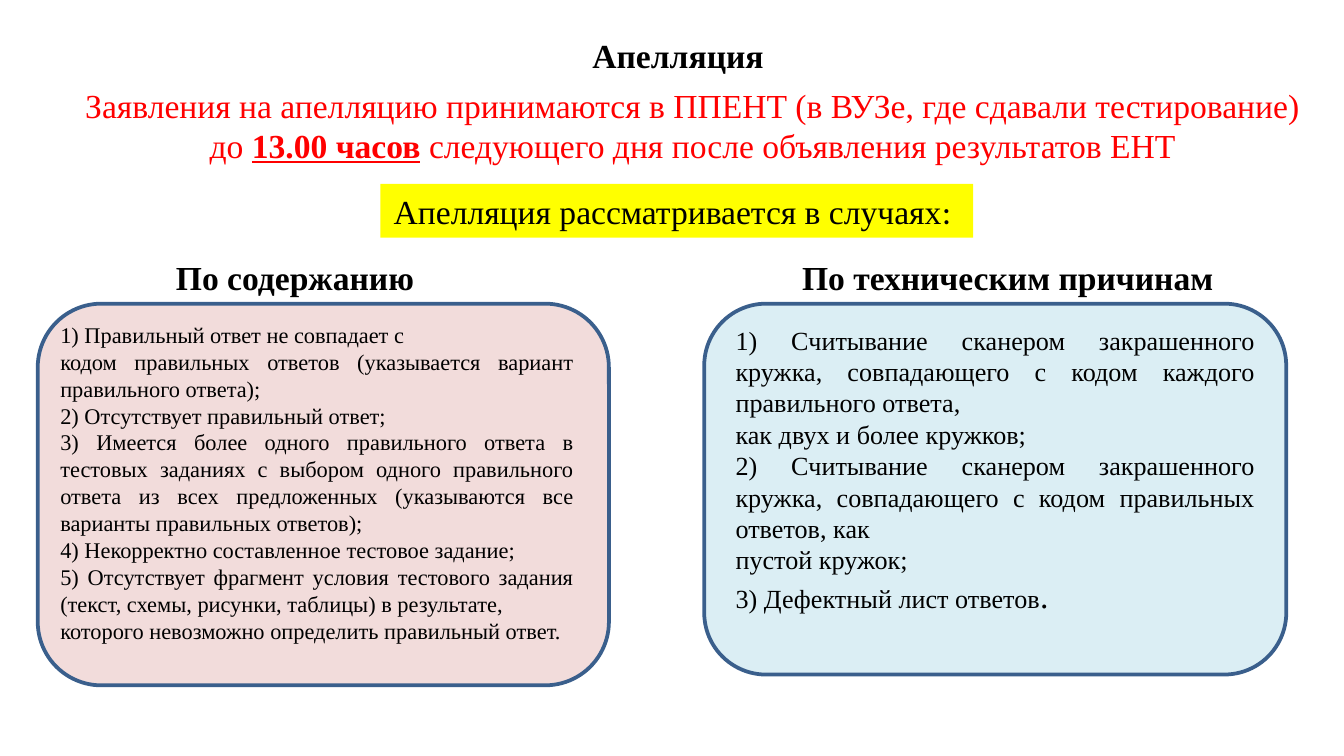
from pptx import Presentation
from pptx.dml.color import RGBColor
from pptx.enum.shapes import MSO_SHAPE
from pptx.enum.text import MSO_ANCHOR, PP_ALIGN
from pptx.util import Pt

BLACK = RGBColor(0x00, 0x00, 0x00)
RED = RGBColor(0xFF, 0x00, 0x00)
YELLOW = RGBColor(0xFF, 0xFF, 0x00)
PINK = RGBColor(0xF2, 0xDC, 0xDB)
PALE_BLUE = RGBColor(0xDB, 0xEE, 0xF4)
OUTLINE = RGBColor(0x3A, 0x5F, 0x8C)
SERIF = "Times New Roman"

# Content: each paragraph is a list of (text, format) spans
TITLE = [[("Апелляция", {"bold": True})]]
DEADLINE = [[
    ("Заявления на апелляцию принимаются в ППЕНТ (в ВУЗе, где сдавали тестирование) до ", {}),
    ("13.00 часов", {"bold": True, "underline": True}),
    (" следующего дня после объявления результатов ЕНТ", {}),
]]
CASES = [[("Апелляция рассматривается в случаях", {}), (":", {"name": "Calibri"})]]
CONTENT_HEADING = [[("По содержанию", {"bold": True})]]
TECHNICAL_HEADING = [[("По техническим причинам", {"bold": True})]]
CONTENT_REASONS = [[(line, {})] for line in (
    "1) Правильный ответ не совпадает с",
    "кодом правильных ответов (указывается вариант правильного ответа);",
    "2) Отсутствует правильный ответ;",
    "3) Имеется более одного правильного ответа в тестовых заданиях с выбором одного "
    "правильного ответа из всех предложенных (указываются все варианты правильных ответов);",
    "4) Некорректно составленное тестовое задание;",
    "5) Отсутствует фрагмент условия тестового задания (текст, схемы, рисунки, таблицы) "
    "в результате,",
    "которого невозможно определить правильный ответ.",
)]
TECHNICAL_REASONS = [[(line, {})] for line in (
    "1) Считывание сканером закрашенного кружка, совпадающего с кодом каждого "
    "правильного ответа,",
    "как двух и более кружков;",
    "2) Считывание сканером закрашенного кружка, совпадающего с кодом правильных ответов, как",
    "пустой кружок;",
)] + [[("3) Дефектный лист ответов", {}), (".", {"size": Pt(18)})]]

# Shared rows
HEADING_TOP, PANEL_TOP, LINE_HEIGHT = 133.9, 162.7, 28.8

deck = Presentation()
deck.slide_width, deck.slide_height = Pt(720), Pt(405)
page = deck.slides.add_slide(deck.slide_layouts[6])


def write(box, paragraphs, align=PP_ALIGN.CENTER, size=18, color=BLACK,
          anchor=MSO_ANCHOR.TOP):
    frame = box.text_frame
    frame.word_wrap = True
    frame.vertical_anchor = anchor
    for index, spans in enumerate(paragraphs):
        para = frame.paragraphs[0] if index == 0 else frame.add_paragraph()
        para.alignment = align
        for text, extra in spans:
            span = para.add_run()
            span.text = text
            span.font.color.rgb = color
            for key, value in {"name": SERIF, "size": Pt(size), **extra}.items():
                setattr(span.font, key, value)


def add_text(place, paragraphs, **style):
    write(page.shapes.add_textbox(*map(Pt, place)), paragraphs, **style)


def add_panel(kind, place, fill, outlined=True):
    panel = page.shapes.add_shape(kind, *map(Pt, place))
    panel.shadow.inherit = False
    panel.fill.solid()
    panel.fill.fore_color.rgb = fill
    if outlined:
        panel.line.color.rgb = OUTLINE
        panel.line.width = Pt(2)
    else:
        panel.line.fill.background()
    return panel


# Panel behind the content reasons
add_panel(MSO_SHAPE.ROUNDED_RECTANGLE, (20.2, PANEL_TOP, 306, 204.5), PINK)

# Title and deadline
add_text((110.9, 15.1, 504.7, LINE_HEIGHT), TITLE)
add_text((36.7, 41.8, 668.9, 51.1), DEADLINE, color=RED)

# Highlighted strip
strip = add_panel(MSO_SHAPE.RECTANGLE, (203.8, 98.6, 317.5, LINE_HEIGHT), YELLOW, outlined=False)
write(strip, CASES, align=PP_ALIGN.LEFT)

# Column headings
add_text((46.8, HEADING_TOP, 222.5, LINE_HEIGHT), CONTENT_HEADING)
add_text((422.6, HEADING_TOP, 254.9, LINE_HEIGHT), TECHNICAL_HEADING, align=PP_ALIGN.LEFT)

# Reasons
add_text((25.2, 168.5, 289.4, 203.8), CONTENT_REASONS, align=PP_ALIGN.JUSTIFY, size=12)
technical = add_panel(MSO_SHAPE.ROUNDED_RECTANGLE, (377.3, PANEL_TOP, 311.8, 198.7), PALE_BLUE)
technical.text_frame.margin_bottom = Pt(24.3)
write(technical, TECHNICAL_REASONS, align=PP_ALIGN.JUSTIFY, size=14, anchor=MSO_ANCHOR.MIDDLE)

deck.save("out.pptx")
